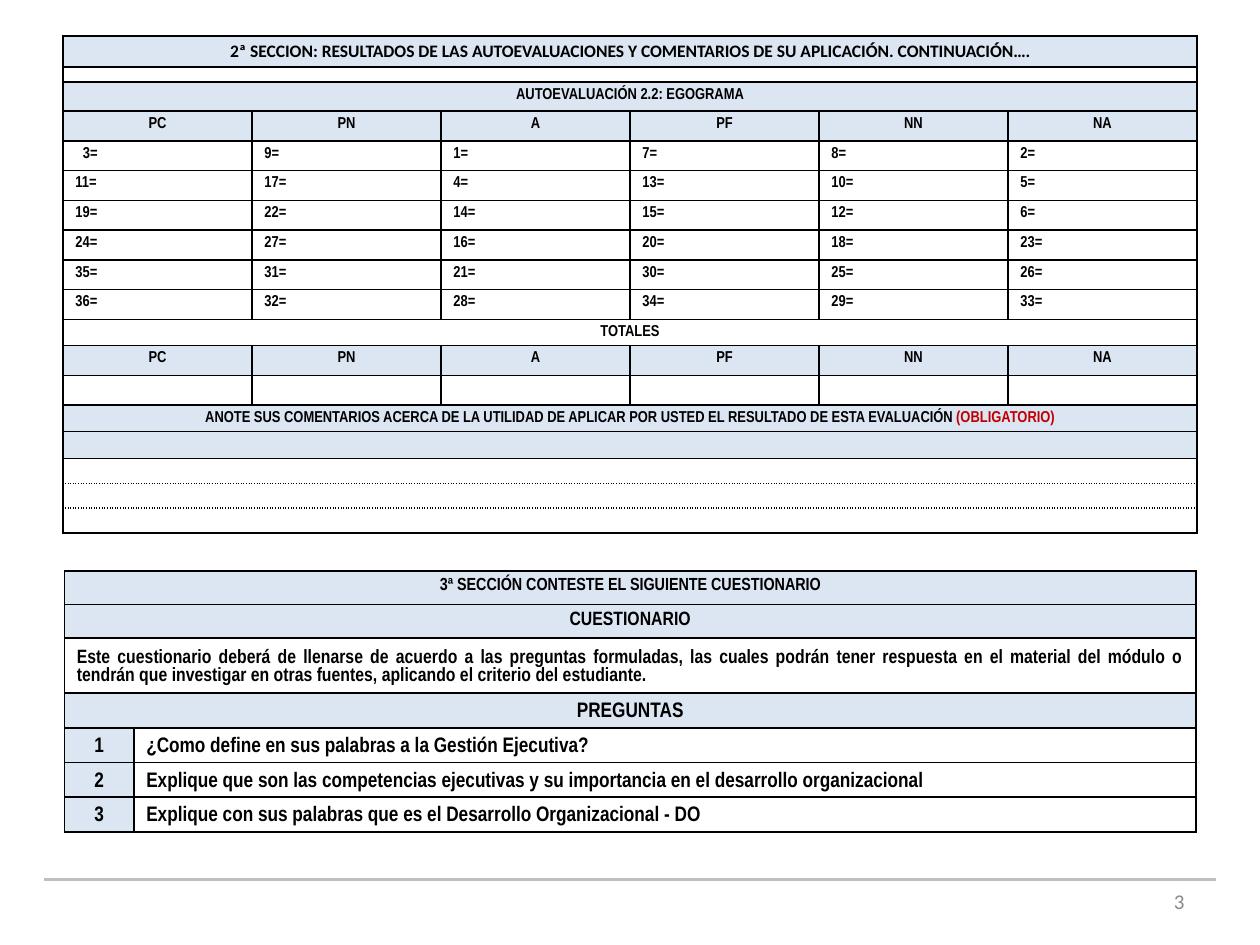
from lxml import etree
from pptx import Presentation
from pptx.dml.color import RGBColor
from pptx.enum.shapes import MSO_CONNECTOR
from pptx.enum.text import MSO_ANCHOR, PP_ALIGN
from pptx.oxml.ns import qn
from pptx.util import Cm, Pt

LEFT, CENTER, RIGHT, JUSTIFY = PP_ALIGN.LEFT, PP_ALIGN.CENTER, PP_ALIGN.RIGHT, PP_ALIGN.JUSTIFY
TOP, MIDDLE = MSO_ANCHOR.TOP, MSO_ANCHOR.MIDDLE
STRAIGHT = MSO_CONNECTOR.STRAIGHT

THEME = {
    "ink": "000000", "band": "DCE6F2", "paper": "FFFFFF", "alert": "C00000",
    "rule": "BFBFBF", "number": "898989",
    "body_font": "Arial Narrow", "title_font": "Calibri",
    "small": 9, "normal": 10, "medium": 11, "large": 12,
}
SOLID, THIN, DOTTED = (1, "solid"), (0.75, "solid"), (1, "sysDot")
DEFAULTS = {
    "font": "body_font", "size": "small", "fill": "paper", "align": CENTER, "anchor": TOP,
    "spacing": 0.9, "margin_left": 0.25, "top": SOLID, "bottom": SOLID, "first": {},
}


def write_span(para, text, font, size, color, bold=True):
    span = para.add_run()
    span.text = text
    values = {"name": THEME[font], "size": Pt(THEME[size]), "bold": bold}
    for name, value in values.items():
        setattr(span.font, name, value)
    span.font.color.rgb = RGBColor.from_string(THEME[color])


def add_grid(page, left, top, widths, rows):
    heights = [row["height"] for row in rows]
    table = page.shapes.add_table(len(rows), len(widths), Cm(left), Cm(top),
                                  Cm(sum(widths)), Cm(sum(heights))).table
    table.first_row = table.horz_banding = False
    for column, width in zip(table.columns, widths):
        column.width = Cm(width)
    for index, row in enumerate(rows):
        table.rows[index].height = Cm(row["height"])
        texts = row["texts"]
        last = len(widths) - 1
        if len(texts) == 1:
            table.cell(index, 0).merge(table.cell(index, last))
        for position in range(len(widths)):
            cell = table.cell(index, position)
            look = {**DEFAULTS, **row, **(row.get("first", {}) if position == 0 else {})}

            # Borders come before the fill in the cell properties
            edges = {"lnL": SOLID, "lnR": SOLID, "lnT": look["top"], "lnB": look["bottom"]}
            if cell.is_spanned:
                del edges["lnL"]
                if position < last:
                    del edges["lnR"]
            properties = cell._tc.get_or_add_tcPr()
            for tag, (width, dash) in edges.items():
                line = etree.SubElement(properties, qn(f"a:{tag}"), w=str(Pt(width)))
                paint = etree.SubElement(line, qn("a:solidFill"))
                etree.SubElement(paint, qn("a:srgbClr"), val=THEME["ink"])
                etree.SubElement(line, qn("a:prstDash"), val=dash)
            if look["fill"]:
                cell.fill.solid()
                cell.fill.fore_color.rgb = RGBColor.from_string(THEME[look["fill"]])
            else:
                cell.fill.background()

            text = "" if cell.is_spanned else texts[position]
            margins = {"margin_left": look["margin_left"], "margin_right": 0.25,
                       "margin_top": 0.13 if text else 0, "margin_bottom": 0.05 if text else 0}
            for name, value in margins.items():
                setattr(cell, name, Cm(value))
            cell.vertical_anchor = look["anchor"]
            para = cell.text_frame.paragraphs[0]
            para.alignment = look["align"]
            if text:
                para.line_spacing = look["spacing"]
                write_span(para, text, look["font"], look["size"], "ink")
                if "alert" in look:
                    write_span(para, look["alert"], look["font"], look["size"], "alert")
            else:
                etree.SubElement(para._p, qn("a:endParaRPr"), sz="400")


deck = Presentation()
deck.slide_width, deck.slide_height = Cm(25.4), Cm(19.05)
page = deck.slides.add_slide(deck.slide_layouts[6])

# Footer rule and page number
rule = page.shapes.add_connector(STRAIGHT, Cm(0.89), Cm(17.73), Cm(24.51), Cm(17.73))
rule.line.color.rgb = RGBColor.from_string(THEME["rule"])
rule.line.width = Pt(2)
etree.SubElement(rule._element.spPr, qn("a:effectLst"))
box = page.shapes.add_textbox(Cm(18.21), Cm(17.65), Cm(5.92), Cm(1.02))
box.text_frame.word_wrap = True
box.text_frame.vertical_anchor = MIDDLE
para = box.text_frame.paragraphs[0]
para.alignment = RIGHT
write_span(para, "3", "title_font", "large", "number", bold=False)

# Second section: egogram self-assessment
states = ["PC", "PN", "A", "PF", "NN", "NA"]
answers = [
    [3, 9, 1, 7, 8, 2],
    [11, 17, 4, 13, 10, 5],
    [19, 22, 14, 15, 12, 6],
    [24, 27, 16, 20, 18, 23],
    [35, 31, 21, 30, 25, 26],
    [36, 32, 28, 34, 29, 33],
]
state_row = {"texts": states, "height": 0.6, "fill": "band"}
answer_rows = [{"texts": [f"{number}=" for number in numbers], "height": 0.6, "align": LEFT}
               for numbers in answers]
answer_rows[0]["first"] = {"margin_left": 0.4}
comment_edges = [(THIN, DOTTED), (DOTTED, DOTTED), (DOTTED, THIN)]
egogram = [
    {"texts": ["2ª SECCION: RESULTADOS DE LAS AUTOEVALUACIONES Y COMENTARIOS DE SU "
               "APLICACIÓN. CONTINUACIÓN…."],
     "height": 0.62, "fill": "band", "font": "title_font", "size": "normal"},
    {"texts": [""], "height": 0.3},
    {"texts": ["AUTOEVALUACIÓN 2.2: EGOGRAMA"], "height": 0.59, "fill": "band"},
    state_row,
    *answer_rows,
    {"texts": ["TOTALES"], "height": 0.52, "fill": None},
    state_row,
    {"texts": [""] * len(states), "height": 0.6, "bottom": THIN},
    {"texts": ["ANOTE SUS COMENTARIOS ACERCA DE LA UTILIDAD DE APLICAR POR USTED EL "
               "RESULTADO DE ESTA EVALUACIÓN "],
     "alert": "(OBLIGATORIO)", "height": 0.54, "fill": "band", "top": THIN, "bottom": THIN},
    {"texts": [""], "height": 0.54, "fill": "band", "top": THIN, "bottom": THIN},
    *[{"texts": [""], "height": 0.5, "top": upper, "bottom": lower}
      for upper, lower in comment_edges],
]
add_grid(page, 1.27, 0.73, [3.81] * len(states), egogram)

# Third section: questionnaire
questions = [
    ("¿Como define en sus palabras a la Gestión Ejecutiva?", JUSTIFY),
    ("Explique que son las competencias ejecutivas y su importancia en el desarrollo "
     "organizacional", LEFT),
    ("Explique con sus palabras que es el Desarrollo Organizacional - DO", JUSTIFY),
]
questionnaire = [
    {"texts": ["3ª SECCIÓN CONTESTE EL SIGUIENTE CUESTIONARIO"], "height": 0.68,
     "fill": "band", "size": "normal"},
    {"texts": ["CUESTIONARIO"], "height": 0.67, "fill": "band", "size": "medium"},
    {"texts": ["Este cuestionario deberá de llenarse de acuerdo a las preguntas formuladas, "
               "las cuales podrán tener respuesta en el material del módulo o tendrán que "
               "investigar en otras fuentes, aplicando el criterio del estudiante."],
     "height": 1.1, "size": "medium", "align": JUSTIFY, "anchor": MIDDLE},
    {"texts": ["PREGUNTAS"], "height": 0.7, "fill": "band", "size": "large", "anchor": MIDDLE},
    *[{"texts": [str(number), question], "height": 0.7, "size": "large", "align": align,
       "anchor": MIDDLE, "first": {"fill": "band", "align": CENTER}}
      for number, (question, align) in enumerate(questions, 1)],
]
add_grid(page, 1.3, 11.51, [1.4, 21.41], [{**row, "spacing": 1.0} for row in questionnaire])

deck.save("out.pptx")
